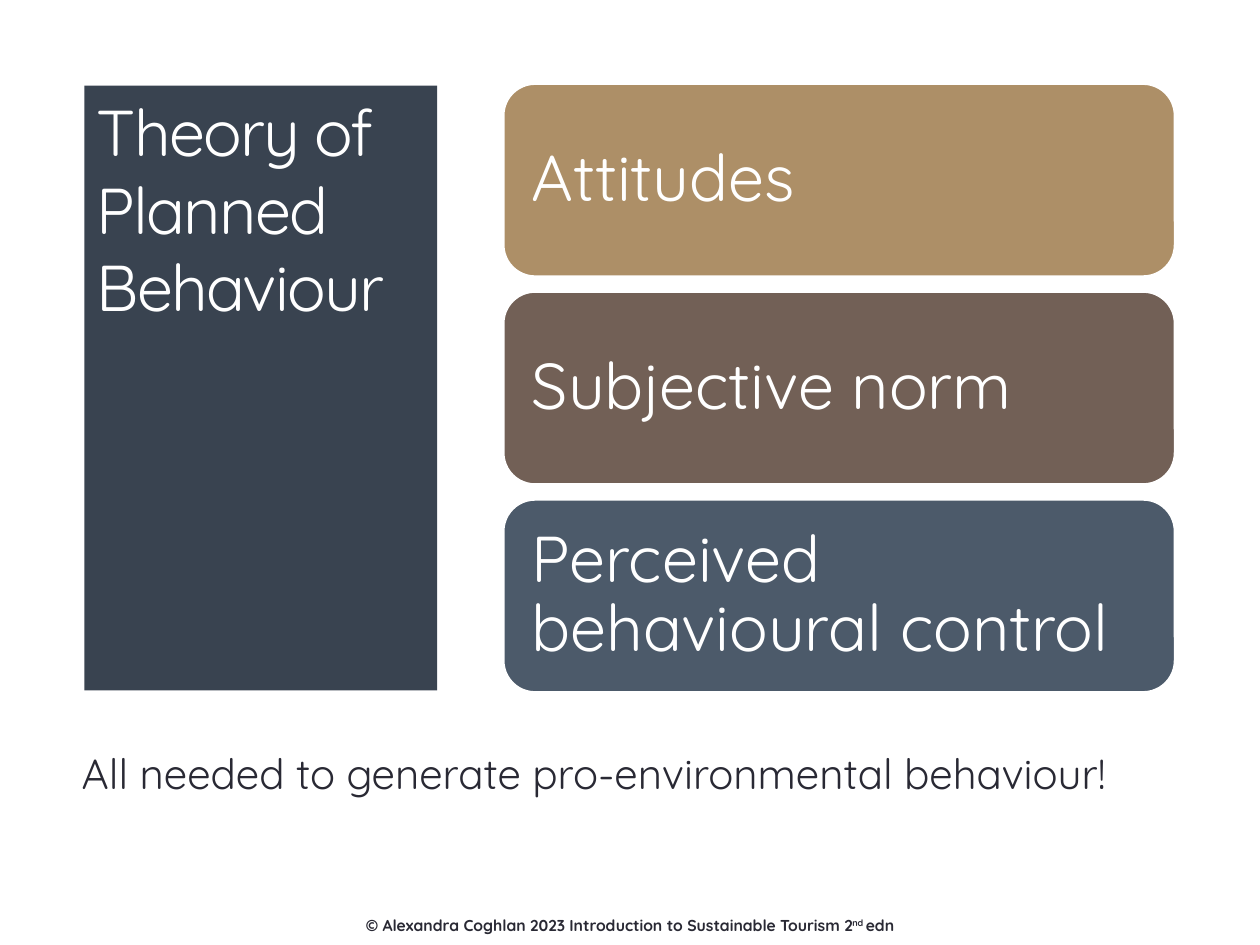
from pptx import Presentation
from pptx import util as u
from pptx.dml.color import RGBColor
from pptx.enum import shapes, text

WHITE = RGBColor(0xFF, 0xFF, 0xFF)
INK = RGBColor(0x29, 0x29, 0x34)
SLATE = RGBColor(0x39, 0x43, 0x50)
SAND = RGBColor(0xAD, 0x8F, 0x67)
BROWN = RGBColor(0x72, 0x60, 0x56)
BLUE = RGBColor(0x4C, 0x5A, 0x6A)


class Deck:
    """Holds the text style and the current slide."""

    font = {"name": "Quicksand", "size": u.Pt(37), "bold": False}

    def __init__(self, slide):
        self.s = slide

    def fill_text(self, sp, runs, color=WHITE, align=text.PP_ALIGN.LEFT, frame=None, **fmt):
        tf = sp.text_frame
        for key, value in {"word_wrap": True, **(frame or {})}.items():
            setattr(tf, key, value)
        p = tf.paragraphs[0]
        p.alignment = align
        for words, attrs in runs:
            r = p.add_run()
            r.text = words
            for key, value in {**self.font, **fmt}.items():
                setattr(r.font, key, value)
            r.font.color.rgb = color
            for key, value in attrs.items():
                r._r.get_or_add_rPr().set(key, value)
        return p

    def box(self, kind, at, fill, line=None):
        sp = self.s.shapes.add_shape(kind, *map(u.Inches, at))
        sp.shadow.inherit = False
        sp.fill.solid()
        sp.fill.fore_color.rgb = fill
        if line is None:
            sp.line.fill.background()
        else:
            sp.line.color.rgb = line
            sp.line.width = u.Pt(2.08)
        return sp

    def title(self, words, at, fill):
        sp = self.box(shapes.MSO_SHAPE.RECTANGLE, at, fill)
        frame = {"vertical_anchor": text.MSO_ANCHOR.TOP}
        self.fill_text(sp, [(words, {"spc": "-100"})], frame=frame)

    def card(self, words, at, fill):
        self.box(shapes.MSO_SHAPE.ROUNDED_RECTANGLE, at, fill, WHITE)
        frame = {"vertical_anchor": text.MSO_ANCHOR.MIDDLE}
        for side in ("left", "right", "top", "bottom"):
            frame[f"margin_{side}"] = u.Inches(0.15)
        left, top, width, height = at
        inset = 0.08
        label = (left + inset, top + inset, width - 2 * inset, height - 2 * inset)
        p = self.label([(words, {})], label, color=WHITE, frame=frame)
        p.line_spacing = 0.9

    def label(self, runs, at, color=INK, **fmt):
        sp = self.s.shapes.add_textbox(*map(u.Inches, at))
        return self.fill_text(sp, runs, color, **fmt)


def main():
    prs = Presentation()
    prs.slide_width, prs.slide_height = u.Inches(10), u.Inches(7.5)
    deck = Deck(prs.slides.add_slide(prs.slide_layouts[6]))

    footer = [
        ("© Alexandra Coghlan 2023 Introduction to Sustainable Tourism 2", {}),
        ("nd ", {"baseline": "30000"}),
        ("edn", {}),
    ]
    deck.label(footer, (2.64, 7.22, 4.72, 0.25), align=text.PP_ALIGN.CENTER,
               size=u.Pt(9), bold=True)
    deck.title("Theory of Planned Behaviour", (0.67, 0.68, 2.8, 4.8), SLATE)

    cards = [("Attitudes", SAND), ("Subjective norm", BROWN),
             ("Perceived behavioural control", BLUE)]
    height, gap = 1.54, 0.11
    for i, (words, fill) in enumerate(cards):
        deck.card(words, (3.99, 0.66 + i * (height + gap), 5.34, height), fill)

    deck.label([("All needed to generate pro-environmental behaviour!", {})],
               (0.55, 5.88, 9.45, 0.81), size=u.Pt(24))
    prs.save("out.pptx")


if __name__ == "__main__":
    main()
